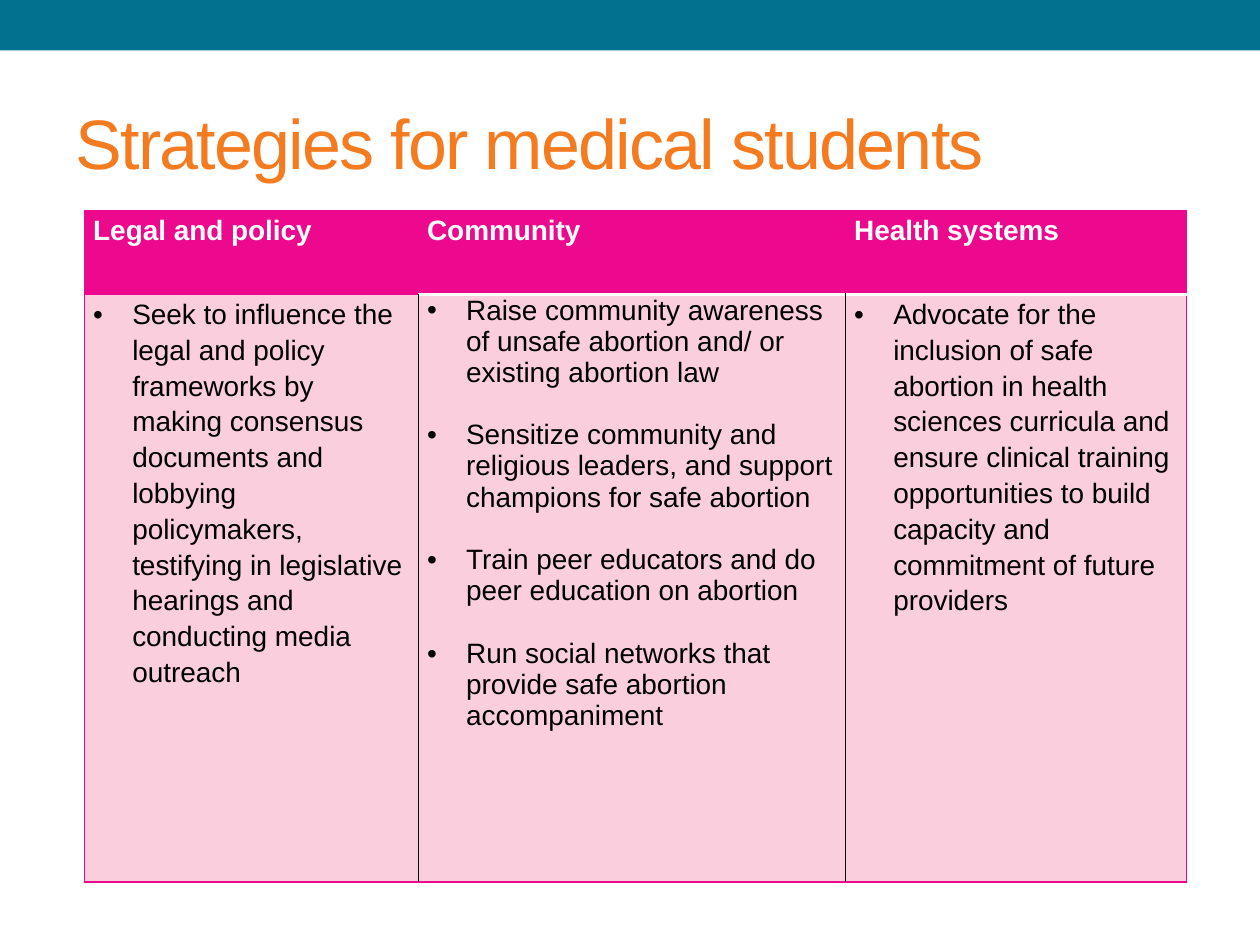
from lxml import etree
from pptx import Presentation
from pptx import util as u
from pptx.dml.color import RGBColor
from pptx.enum import shapes, text
from pptx.oxml.ns import qn

TEAL = RGBColor(0x00, 0x72, 0x8F)
ORANGE = RGBColor(0xF4, 0x7B, 0x20)
MAGENTA = RGBColor(0xEC, 0x09, 0x8D)
PINK = RGBColor(0xFA, 0xCE, 0xDD)
WHITE = RGBColor(0xFF, 0xFF, 0xFF)
BLACK = RGBColor(0x00, 0x00, 0x00)

THIN = (MAGENTA, 0.75)
DIVIDER = (BLACK, 1)
HEADER_RULE = (WHITE, 2.08)

LOOSE = dict(line_spacing=1.15, space_before=u.Pt(6), space_after=u.Pt(12))
LOOSE_TOP = dict(line_spacing=1.15, space_after=u.Pt(12))
ONE_LINE_GAP = dict(space_after=u.Pt(18))

STRATEGIES = [
    ("Legal and policy", 26.5, LOOSE_TOP, [
        "Seek to influence the legal and policy frameworks by making consensus "
        "documents and lobbying policymakers, testifying in legislative "
        "hearings and conducting media outreach"]),
    ("Community", 33.9, ONE_LINE_GAP, [
        "Raise community awareness of unsafe abortion and/ or existing abortion law",
        "Sensitize community and religious leaders, and support champions for "
        "safe abortion",
        "Train peer educators and do peer education on abortion",
        "Run social networks that provide safe abortion accompaniment"]),
    ("Health systems", 27.1, LOOSE, [
        "Advocate for the inclusion of safe abortion in health sciences curricula "
        "and ensure clinical training opportunities to build capacity and "
        "commitment of future providers"]),
]


class SlideBuilder:
    """Places elements on a grid of 100 columns by 75 rows."""

    font = "Arial"
    body_size = 16
    indent = u.Inches(0.31)

    def __init__(self, deck):
        self.slide = deck.slides.add_slide(deck.slide_layouts[5])
        self.column = deck.slide_width / 100
        self.row = deck.slide_height / 75

    def box(self, left, top, width, height):
        return (round(left * self.column), round(top * self.row),
                round(width * self.column), round(height * self.row))

    def run(self, paragraph, words, size, color, bold=False):
        run = paragraph.add_run()
        run.text = words
        run.font.name, run.font.size, run.font.bold = self.font, u.Pt(size), bold
        run.font.color.rgb = color
        return run

    def band(self, place, color):
        band = self.slide.shapes.add_shape(
            shapes.MSO_SHAPE.RECTANGLE, *self.box(*place))
        band.shadow.inherit = False
        band.fill.solid()
        band.fill.fore_color.rgb = color
        band.line.fill.background()

    def title(self, place, words):
        title = self.slide.shapes.title
        title.left, title.top, title.width, title.height = self.box(*place)
        frame = title.text_frame
        frame.auto_size = text.MSO_AUTO_SIZE.NONE
        frame.vertical_anchor = text.MSO_ANCHOR.MIDDLE
        frame.paragraphs[0].alignment = text.PP_ALIGN.LEFT
        run = self.run(frame.paragraphs[0], words, 40, ORANGE)
        run.font._element.set("spc", "-100")

    def table(self, left, top, widths, heights):
        frame = self.slide.shapes.add_table(
            len(heights), len(widths),
            *self.box(left, top, sum(widths), sum(heights)))
        table = frame.table
        table.first_row = table.horz_banding = False
        for column, width in zip(table.columns, widths):
            column.width = round(width * self.column)
        for row, height in zip(table.rows, heights):
            row.height = round(height * self.row)
        return table

    def cell(self, cell, paragraphs, spacing, fill, color, borders,
             bold=False, bulleted=False):
        cell.margin_left = cell.margin_right = u.Inches(0.07)
        cell.margin_top = cell.margin_bottom = 0
        self.borders(cell, borders)
        cell.fill.solid()
        cell.fill.fore_color.rgb = fill
        for i, words in enumerate(paragraphs):
            frame = cell.text_frame
            paragraph = frame.add_paragraph() if i else frame.paragraphs[0]
            for name, value in spacing.items():
                setattr(paragraph, name, value)
            if bulleted:
                self.bullet(paragraph)
            self.run(paragraph, words, self.body_size, color, bold)

    def bullet(self, paragraph):
        properties = paragraph._p.get_or_add_pPr()
        properties.set("marL", str(self.indent))
        properties.set("indent", str(-self.indent))
        etree.SubElement(properties, qn("a:buFont")).set("typeface", self.font)
        etree.SubElement(properties, qn("a:buChar")).set("char", "•")

    def borders(self, cell, borders):
        """Draws the sides named L, R, T and B; the others stay empty."""
        properties = cell._tc.get_or_add_tcPr()
        for side in "LRTB":
            line = etree.SubElement(properties, qn(f"a:ln{side}"))
            if side not in borders:
                etree.SubElement(line, qn("a:noFill"))
                continue
            color, width = borders[side]
            line.set("w", str(u.Pt(width)))
            fill = etree.SubElement(line, qn("a:solidFill"))
            etree.SubElement(fill, qn("a:srgbClr")).set("val", str(color))


def main():
    deck = Presentation()
    deck.slide_width, deck.slide_height = u.Inches(10), u.Inches(7.5)
    builder = SlideBuilder(deck)
    builder.band((0, 0, 100, 4), TEAL)
    builder.title((5, 5.8, 90, 10.8), "Strategies for medical students")

    widths = [width for _, width, _, _ in STRATEGIES]
    table = builder.table(6.7, 16.7, widths, [6.7, 46.6])
    last = len(STRATEGIES) - 1
    for i, (heading, _, spacing, actions) in enumerate(STRATEGIES):
        rule = HEADER_RULE if i else THIN
        header_sides = {"T": THIN, "B": rule}
        if i == 0:
            header_sides["L"] = THIN
        if i == last:
            header_sides["R"] = THIN
        builder.cell(table.cell(0, i), [heading], LOOSE, MAGENTA, WHITE,
                     header_sides, bold=True)
        body_sides = {"L": DIVIDER if i else THIN,
                      "R": THIN if i == last else DIVIDER,
                      "T": rule, "B": THIN}
        builder.cell(table.cell(1, i), actions, spacing, PINK, BLACK,
                     body_sides, bulleted=True)
    deck.save("out.pptx")


if __name__ == "__main__":
    main()
